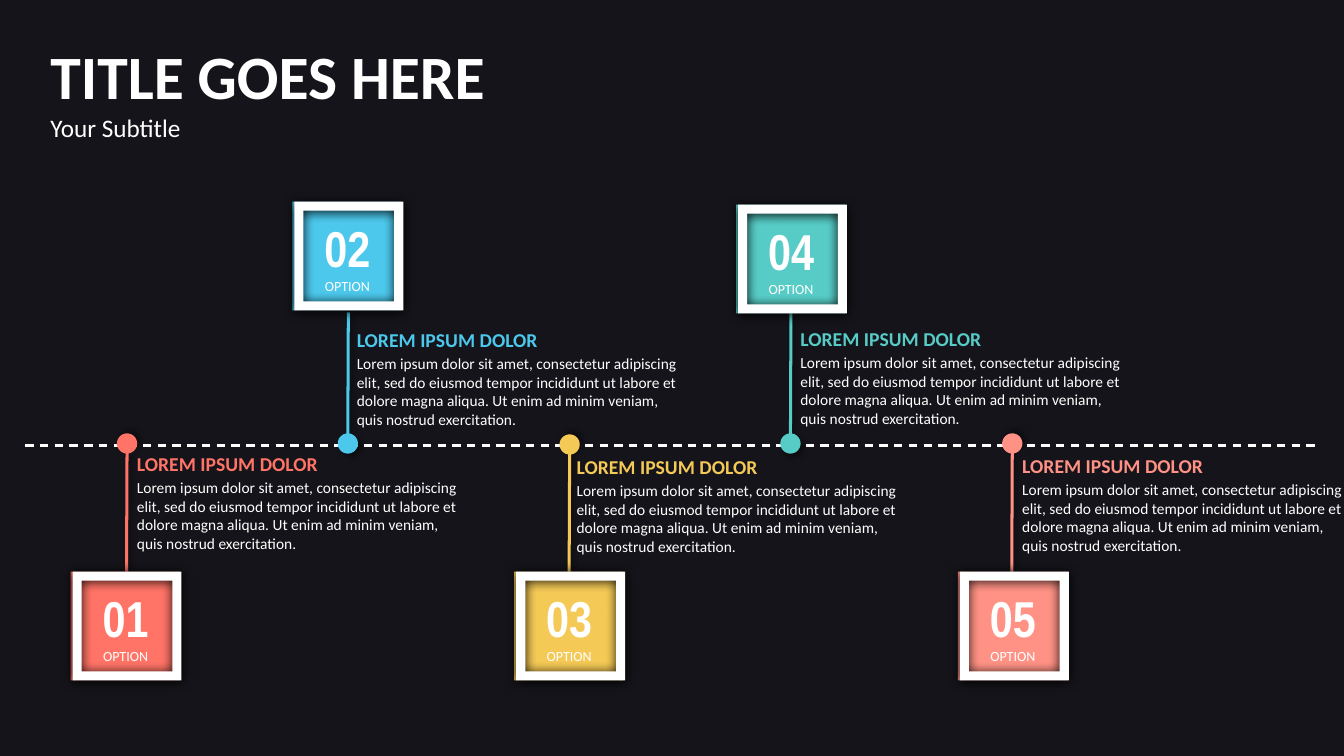
from dataclasses import dataclass
from math import cos, pi, sin

from lxml import etree
from pptx import Presentation
from pptx.dml.color import RGBColor
from pptx.enum.dml import MSO_LINE
from pptx.enum.shapes import MSO_CONNECTOR, MSO_SHAPE
from pptx.enum.text import MSO_ANCHOR, MSO_AUTO_SIZE, PP_ALIGN
from pptx.oxml.ns import qn
from pptx.shapes.autoshape import Shape
from pptx.shapes.shapetree import GroupShapes, SlideShapes
from pptx.slide import Slide
from pptx.text.text import TextFrame
from pptx.util import Pt

RECTANGLE, FRAME = MSO_SHAPE.RECTANGLE, MSO_SHAPE.FRAME
STRAIGHT, DASH = MSO_CONNECTOR.STRAIGHT, MSO_LINE.DASH
LEFT, CENTER, TOP = PP_ALIGN.LEFT, PP_ALIGN.CENTER, MSO_ANCHOR.TOP
NO_AUTOSIZE = MSO_AUTO_SIZE.NONE

EMU_PER_PX = 9144  # 100 px to the inch
SLIDE_SIZE = (1333, 750)
TILE, TILE_PITCH, FRAME_BORDER = 108, 220, 9
PIN_RADIUS, PIN_LENGTH, ARC_STEPS = 10, 130, 48
BODY = (
    "Lorem ipsum dolor sit amet, consectetur adipiscing elit, sed do eiusmod "
    "tempor incididunt ut labore et dolore magna aliqua. Ut enim ad minim "
    "veniam, quis nostrud exercitation."
)


@dataclass(frozen=True)
class Theme:
    background: str = "15141A"
    white: str = "FFFFFF"
    shadow: str = "000000"
    font: str = "Calibri"
    number_font: str = "Arial Narrow"
    title: int = 44
    subtitle: int = 18
    number: int = 36
    label: int = 10
    heading: int = 14
    body: int = 11


@dataclass(frozen=True)
class Option:
    number: str
    color: str
    above: bool
    tile_top: int
    pin_x: int
    pin_y: int
    text_left: int
    text_top: int


@dataclass(frozen=True)
class Shadow:
    opacity: int
    blur: float
    distance: int
    angle: int


THEME = Theme()
FRAME_SHADOW = Shadow(100, 8.5, 1, 90)
OPTIONS = (
    Option("01", "FF7467", False, 567, 126, 440, 126, 443),
    Option("02", "4CC8EC", True, 200, 345, 440, 344, 320),
    Option("03", "F4C956", False, 567, 565, 441, 562, 446),
    Option("04", "57CCC6", True, 203, 784, 440, 784, 319),
    Option("05", "FF9285", False, 567, 1004, 440, 1004, 445),
)


def px(*lengths: int) -> list[int]:
    return [length * EMU_PER_PX for length in lengths]


def paint(shape: Shape, color: str) -> None:
    shape.fill.solid()
    shape.fill.fore_color.rgb = RGBColor.from_string(color)
    shape.line.fill.background()
    shape.shadow.inherit = False


def cast_shadow(shape: Shape, shadow: Shadow) -> None:
    effects = shape.element.spPr.find(qn("a:effectLst"))
    outer = etree.SubElement(
        effects, qn("a:outerShdw"), blurRad=str(Pt(shadow.blur)),
        dist=str(Pt(shadow.distance)), dir=str(shadow.angle * 60000),
        algn="ctr", rotWithShape="0")
    color = etree.SubElement(outer, qn("a:srgbClr"), val=THEME.shadow)
    etree.SubElement(color, qn("a:alpha"), val=str(shadow.opacity * 1000))


def format_line(frame: TextFrame, index: int, size: int, color: str,
                bold: bool = False, font: str = THEME.font,
                align: PP_ALIGN = LEFT) -> None:
    paragraph = frame.paragraphs[index]
    paragraph.alignment = align
    for run in paragraph.runs:
        run.font.name = font
        run.font.size = Pt(size)
        run.font.bold = bold
        run.font.color.rgb = RGBColor.from_string(color)


def draw_title(slide: Slide) -> None:
    title = slide.shapes.title
    title.left, title.top, title.width, title.height = px(40, 33, 650, 114)
    frame = title.text_frame
    frame.text = "TITLE GOES HERE\nYour Subtitle"
    frame.word_wrap = True
    frame.auto_size = NO_AUTOSIZE
    frame.vertical_anchor = TOP
    format_line(frame, 0, THEME.title, THEME.white, bold=True)
    format_line(frame, 1, THEME.subtitle, THEME.white)


def draw_timeline(shapes: SlideShapes) -> None:
    timeline = shapes.add_connector(STRAIGHT, *px(25, 442, 1305, 442))
    timeline.line.color.rgb = RGBColor.from_string(THEME.white)
    timeline.line.width = Pt(1.5)
    timeline.line.dash_style = DASH
    etree.SubElement(timeline.element.spPr, qn("a:effectLst"))


def draw_pin(shapes: SlideShapes, option: Option) -> None:
    """Draw a dot on the timeline and its stem as one outline."""
    side = 1 if option.above else -1
    stem_end = PIN_RADIUS - PIN_LENGTH - PIN_RADIUS
    outline = [(-1, stem_end), (2, stem_end)]
    gap = 0.15
    for step in range(ARC_STEPS + 1):
        angle = gap + step * (2 * pi - 2 * gap) / ARC_STEPS
        outline.append((PIN_RADIUS * sin(angle), -PIN_RADIUS * cos(angle)))
    points = [(round((option.pin_x + side * x) * EMU_PER_PX),
               round((option.pin_y + side * y) * EMU_PER_PX))
              for x, y in outline]
    builder = shapes.build_freeform(*points[0])
    builder.add_line_segments(points[1:], close=True)
    pin = builder.convert_to_shape()
    paint(pin, option.color)
    cast_shadow(pin, Shadow(40, 4, 3, 45 if option.above else 315))


def draw_tile(shapes: GroupShapes, option: Option, left: int) -> None:
    top = option.tile_top
    paint(shapes.add_shape(RECTANGLE, *px(left, top, TILE, TILE)), option.color)
    border = shapes.add_shape(FRAME, *px(left + 2, top, TILE, TILE))
    border.adjustments[0] = FRAME_BORDER / TILE
    paint(border, THEME.white)
    cast_shadow(border, FRAME_SHADOW)

    frame = shapes.add_textbox(*px(left + 17, top + 12, 75, 84)).text_frame
    frame.word_wrap = True
    frame.margin_left, frame.margin_right = px(7, 7)
    frame.margin_top, frame.margin_bottom = px(3, 3)
    frame.text = f"{option.number}\nOPTION"
    format_line(frame, 0, THEME.number, THEME.white, True, THEME.number_font, CENTER)
    format_line(frame, 1, THEME.label, THEME.white, align=CENTER)


def draw_description(shapes: SlideShapes, option: Option) -> None:
    box = px(option.text_left, option.text_top, 339, 111)
    frame = shapes.add_textbox(*box).text_frame
    frame.word_wrap = True
    frame.text = f"LOREM IPSUM DOLOR\n{BODY}"
    format_line(frame, 0, THEME.heading, option.color, bold=True)
    format_line(frame, 1, THEME.body, THEME.white)
    frame.paragraphs[1].space_before = Pt(2.4)


def main() -> None:
    presentation = Presentation()
    presentation.slide_width, presentation.slide_height = px(*SLIDE_SIZE)
    slide = presentation.slides.add_slide(presentation.slide_layouts[5])
    slide.background.fill.solid()
    slide.background.fill.fore_color.rgb = RGBColor.from_string(THEME.background)

    draw_title(slide)
    draw_timeline(slide.shapes)
    for option in OPTIONS:
        draw_pin(slide.shapes, option)
    for column, option in enumerate(OPTIONS):
        tile = slide.shapes.add_group_shape()
        draw_tile(tile.shapes, option, 70 + column * TILE_PITCH)
    for option in OPTIONS:
        draw_description(slide.shapes, option)
    presentation.save("out.pptx")


if __name__ == "__main__":
    main()
